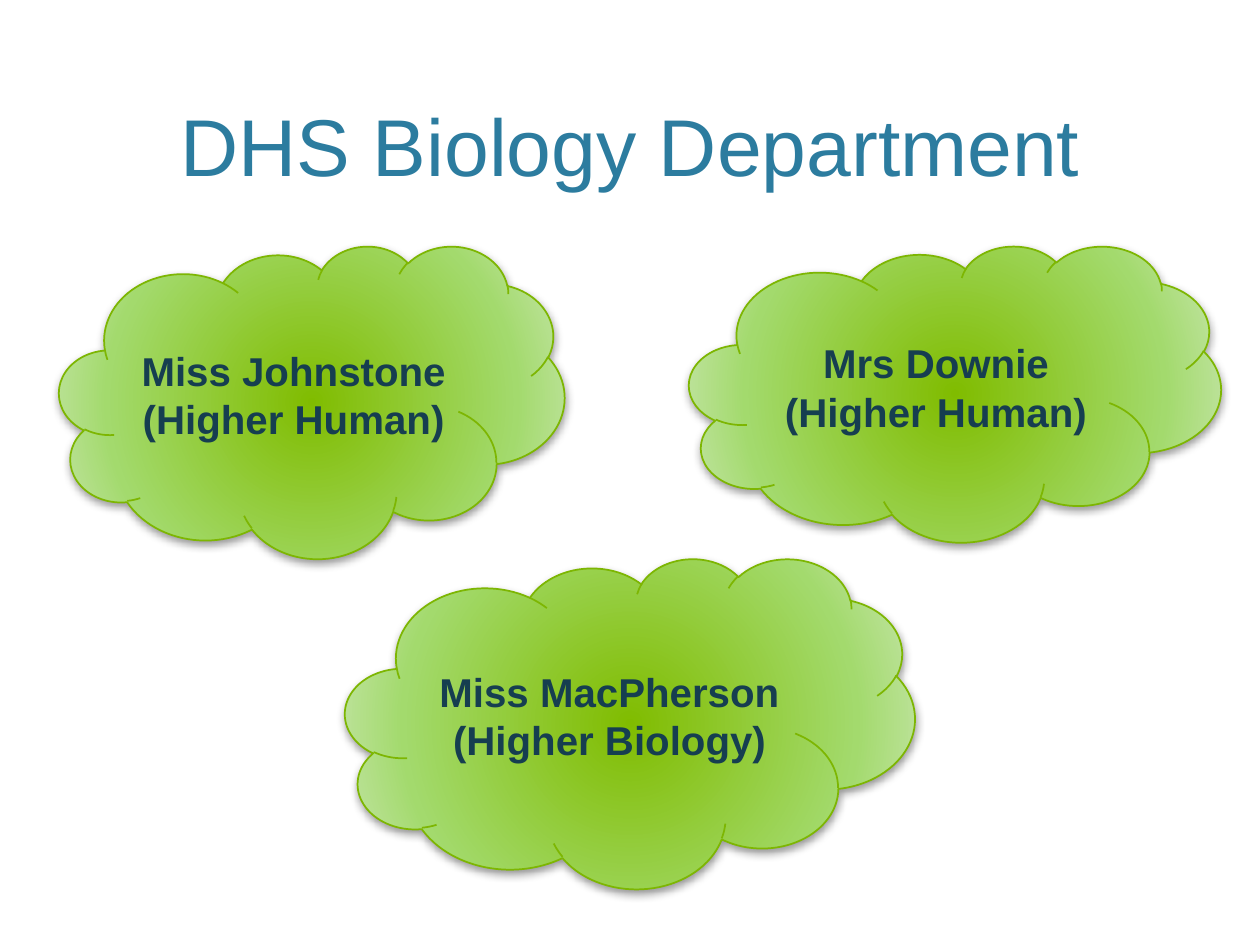
from pptx import Presentation
from pptx.dml.color import RGBColor
from pptx.enum.shapes import MSO_SHAPE as Shape
from pptx.enum.text import MSO_ANCHOR as Anchor, PP_ALIGN as Align
from pptx.oxml import parse_xml
from pptx.oxml.ns import nsdecls, qn
from pptx.util import Inches, Pt

TEAL = RGBColor(0x2C, 0x7C, 0x9F)
NAVY = RGBColor(0x16, 0x3E, 0x50)
EDGE = RGBColor(0x7D, 0xB6, 0x02)
BLACK = RGBColor(0, 0, 0)
STOPS = [(0, RGBColor(0x80, 0xBC, 0x00)),
         (69, RGBColor(0xA3, 0xDA, 0x6D)),
         (100, RGBColor(0xCB, 0xE7, 0xB4))]

HEAD = {"name": "Arial", "size": Pt(46), "bold": False}
LABEL = {"name": "Arial", "size": Pt(23), "bold": True}

# Left, top, width and height in percent of the slide
TITLE = (6, 1.6, 88, 19.47)
STAFF = [
    ((54.7, 26, 42.2, 31.33), ["Mrs Downie", "(Higher Human)"]),
    ((27.4, 59.07, 45.2, 34.93), ["Miss MacPherson", "(Higher Biology)"]),
    ((4.7, 26, 40.1, 33.07), ["Miss Johnstone", "(Higher Human)"]),
]


class Deck:
    """Style and current slide."""

    def __init__(self):
        self.prs = Presentation()
        self.prs.slide_width, self.prs.slide_height = Inches(10), Inches(7.5)
        self.slide = self.prs.slides.add_slide(self.prs.slide_layouts[5])

    def box(self, area):
        """Turn percentages into slide lengths."""
        wide, high = self.prs.slide_width, self.prs.slide_height
        return [round(part * side / 100)
                for part, side in zip(area, (wide, high, wide, high))]

    def label(self, frame, lines, style, color, anchor):
        frame.word_wrap = True
        frame.vertical_anchor = anchor
        frame.text = "\n".join(lines)
        for para in frame.paragraphs:
            para.alignment = Align.CENTER
            font = para.runs[0].font
            for key, value in style.items():
                setattr(font, key, value)
            font.color.rgb = color

    def title(self, text, area):
        head = self.slide.shapes.title
        head.left, head.top, head.width, head.height = self.box(area)
        self.label(head.text_frame, [text], HEAD, TEAL, Anchor.BOTTOM)

    def cloud(self, area, lines):
        shape = self.slide.shapes.add_shape(Shape.CLOUD, *self.box(area))
        shape.line.color.rgb = EDGE
        shape.line.width = Pt(1)
        self.glow(shape)
        self.shade(shape)
        self.label(shape.text_frame, lines, LABEL, NAVY, Anchor.MIDDLE)

    def glow(self, shape):
        """Fill from the centre outwards."""
        stops = "".join(
            f'<a:gs pos="{pos * 1000}"><a:srgbClr val="{color}"/></a:gs>'
            for pos, color in STOPS)
        fill = parse_xml(
            f'<a:gradFill {nsdecls("a")} rotWithShape="1">'
            f'<a:gsLst>{stops}</a:gsLst><a:path path="circle">'
            '<a:fillToRect l="100000" t="100000" r="100000" b="100000"/>'
            '</a:path></a:gradFill>')
        shape.element.spPr.find(qn("a:ln")).addprevious(fill)

    def shade(self, shape):
        """Cast a soft shadow straight down."""
        shape.shadow.inherit = False
        shape.element.spPr.find(qn("a:effectLst")).append(parse_xml(
            f'<a:outerShdw {nsdecls("a")} blurRad="{Pt(5)}" dist="{Pt(2)}" '
            f'dir="5400000" rotWithShape="0"><a:srgbClr val="{BLACK}">'
            '<a:alpha val="40000"/></a:srgbClr></a:outerShdw>'))


def main():
    deck = Deck()
    deck.title("DHS Biology Department", TITLE)
    for area, lines in STAFF:
        deck.cloud(area, lines)
    deck.prs.save("out.pptx")


if __name__ == "__main__":
    main()
